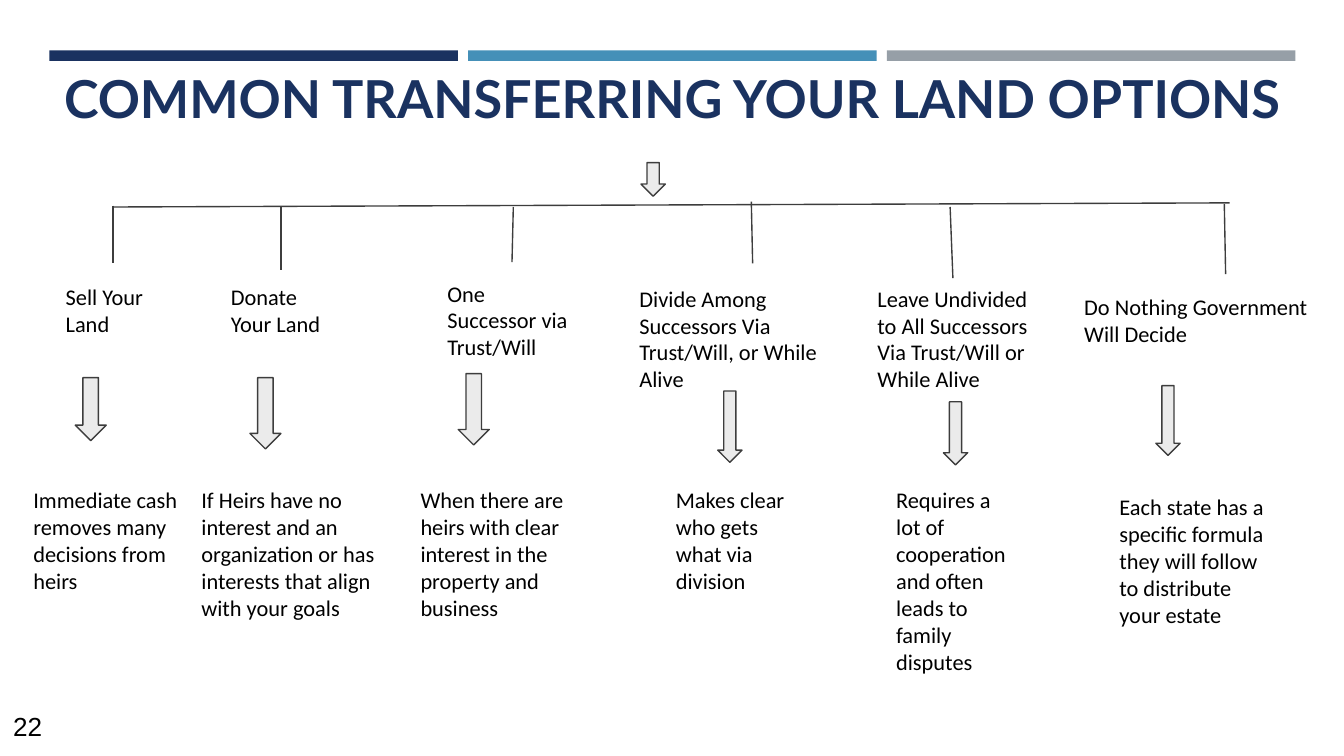
from dataclasses import dataclass

from lxml import etree
from pptx import Presentation
from pptx import util as u
from pptx.dml.color import RGBColor
from pptx.enum import shapes, text
from pptx.oxml.ns import qn

Pt = u.Pt

NAVY = RGBColor(0x1A, 0x32, 0x60)
BLUE = RGBColor(0x45, 0x90, 0xB8)
GREY = RGBColor(0x96, 0x9F, 0xA7)
PALE = RGBColor(0xEB, 0xEB, 0xEB)
DARK = RGBColor(0x3D, 0x3D, 0x3D)
BLACK = RGBColor(0, 0, 0)


@dataclass
class Option:
    """One branch: boxes are left, top, width, height; drop is x1, y1, x2, y2."""
    drop: tuple
    label: str
    label_box: tuple
    arrow_box: tuple
    outcome: str
    outcome_box: tuple


OPTIONS = [
    Option((60.5, 110.2, 60.5, 141.1),
           "Sell Your Land", (28.1, 144.7, 70.6, 43.9),
           (40.3, 202.3, 16.6, 33.8),
           "Immediate cash removes many decisions from heirs",
           (10.8, 253.4, 98.6, 72.7)),
    Option((150.5, 110.9, 150.5, 144.7),
           "Donate Your Land", (116.6, 144.7, 67, 43.9),
           (133.9, 202.3, 16.6, 38.2),
           "If Heirs have no interest and an organization or has "
           "interests that align with your goals",
           (100.8, 253.4, 123.1, 87.1)),
    Option((275, 110.9, 274.3, 140.4),
           "One Successor via Trust/Will", (232.6, 142.6, 83.5, 58.3),
           (245.5, 200.2, 16.6, 38.2),
           "When there are heirs with clear interest in the property "
           "and business",
           (218.2, 253.4, 103, 87.1)),
    Option((402.5, 108, 403.2, 141.1),
           "Divide Among Successors Via Trust/Will, or While Alive",
           (335.5, 145.4, 134.6, 72.7),
           (384.5, 209.5, 13, 38.2),
           "Makes clear who gets what via division",
           (355, 253.4, 83.5, 72.7)),
    Option((509, 110.9, 510.5, 149),
           "Leave Undivided to All Successors Via Trust/Will or While Alive",
           (463, 145.4, 105.8, 72.7),
           (505.4, 215.3, 13, 33.8),
           "Requires a lot of cooperation and often leads to family disputes",
           (473, 253.4, 77.8, 116.6)),
    Option((655.9, 109.4, 656.6, 146.9),
           "Do Nothing Government Will Decide", (573.8, 149.8, 136.8, 58.3),
           (619.2, 206.6, 13, 37.4),
           "Each state has a specific formula they will follow to "
           "distribute your estate",
           (592.6, 257, 97.9, 87.1)),
]


def points(values):
    return [Pt(value) for value in values]


def add_filled(slide, kind, box, color):
    shape = slide.shapes.add_shape(kind, *points(box))
    shape.shadow.inherit = False
    shape.fill.solid()
    shape.fill.fore_color.rgb = color
    shape.line.fill.background()
    return shape


def add_down_arrow(slide, box):
    arrow = add_filled(slide, shapes.MSO_SHAPE.DOWN_ARROW, box, PALE)
    arrow.line.color.rgb = DARK
    arrow.line.width = Pt(0.75)


def add_line(slide, ends):
    line = slide.shapes.add_connector(shapes.MSO_CONNECTOR.STRAIGHT, *points(ends))
    line.line.color.rgb = DARK
    line.line.width = Pt(0.75)
    etree.SubElement(line._element.spPr, qn("a:effectLst"))


def add_text(slide, box, words, size=12, font="Calibri", color=BLACK,
             bold=False, inset=7.2, align=text.PP_ALIGN.LEFT,
             anchor=text.MSO_ANCHOR.TOP):
    frame = slide.shapes.add_textbox(*points(box)).text_frame
    frame.word_wrap = True
    frame.vertical_anchor = anchor
    frame.margin_left = frame.margin_right = Pt(7.2)
    frame.margin_top = frame.margin_bottom = Pt(inset)
    paragraph = frame.paragraphs[0]
    paragraph.alignment = align
    run = paragraph.add_run()
    run.text = words
    run.font.size = Pt(size)
    run.font.name = font
    run.font.bold = bold
    run.font.color.rgb = color


def add_option(slide, option):
    add_line(slide, option.drop)
    add_text(slide, option.label_box, option.label)
    add_down_arrow(slide, option.arrow_box)
    add_text(slide, option.outcome_box, option.outcome)


def main():
    deck = Presentation()
    deck.slide_width, deck.slide_height = Pt(720), Pt(405)
    slide = deck.slides.add_slide(deck.slide_layouts[6])

    # Colour bars across the top
    for index, color in enumerate((NAVY, BLUE, GREY)):
        add_filled(slide, shapes.MSO_SHAPE.RECTANGLE,
                   (26.5 + 224.3 * index, 27, 218.9, 5.6), color)

    # Page number and title
    add_text(slide, (0, 373, 33.8, 32.4), "22", size=14, font="Arial",
             inset=3.6, anchor=text.MSO_ANCHOR.MIDDLE)
    add_text(slide, (24.5, 29.5, 671, 45.4),
             "COMMON TRANSFERRING YOUR LAND OPTIONS", size=28, font="Lato",
             color=NAVY, bold=True, align=text.PP_ALIGN.CENTER,
             anchor=text.MSO_ANCHOR.MIDDLE)

    # Arrow into the rail that joins all branches
    add_down_arrow(slide, (343.4, 87.1, 13, 18))
    add_line(slide, (61.2, 110.9, 658.8, 108.7))

    # Branches
    for option in OPTIONS:
        add_option(slide, option)

    deck.save("out.pptx")


if __name__ == "__main__":
    main()
